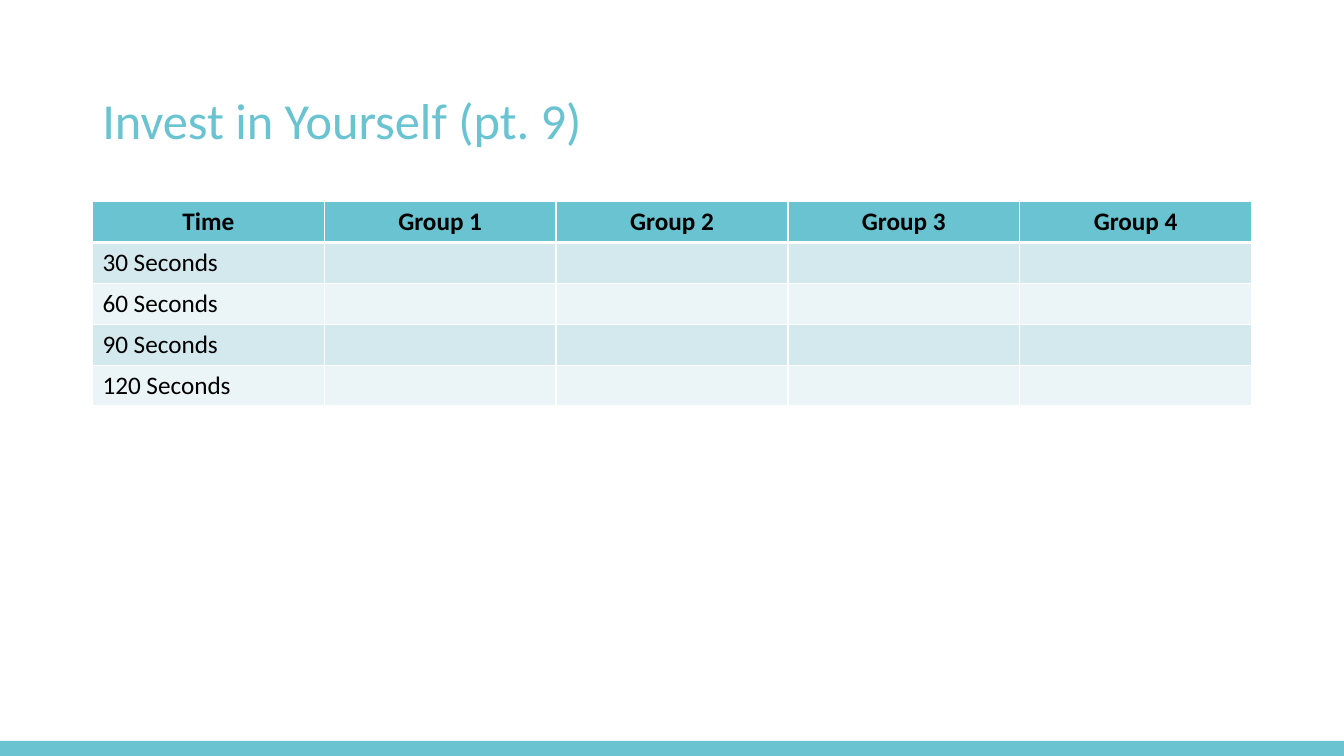
from dataclasses import dataclass

from lxml.etree import SubElement
from pptx import Presentation
from pptx.dml.color import RGBColor
from pptx.enum.shapes import MSO_SHAPE as Shape
from pptx.enum.text import MSO_ANCHOR as Anchor, PP_ALIGN as Align
from pptx.oxml.ns import qn
from pptx.util import Cm, Pt


@dataclass(frozen=True)
class Theme:
    font: str = "Calibri"
    accent: str = "69C3D1"
    bands: tuple = ("D4E9EE", "EBF5F7")
    text: str = "000000"
    border: str = "FFFFFF"
    title_size: int = 36
    table_size: int = 18
    thin_line: int = 1
    header_line: int = 3


theme = Theme()


def add_run(paragraph, text, size, color, bold=False):
    run = paragraph.add_run()
    run.text = text
    run.font.name = theme.font
    run.font.size = Pt(size)
    run.font.bold = bold
    run.font.color.rgb = RGBColor.from_string(color)


def add_border(cell, side, width):
    line = SubElement(cell._tc.get_or_add_tcPr(), qn(f"a:ln{side}"), w=str(Pt(width)))
    fill = SubElement(line, qn("a:solidFill"))
    SubElement(fill, qn("a:srgbClr"), val=theme.border)


presentation = Presentation()
presentation.slide_width = Cm(33.87)
presentation.slide_height = Cm(19.05)
slide = presentation.slides.add_slide(presentation.slide_layouts[6])

# Bottom bar
bar = slide.shapes.add_shape(Shape.RECTANGLE, Cm(0), Cm(18.67), Cm(33.87), Cm(0.38))
bar.shadow.inherit = False
bar.fill.solid()
bar.fill.fore_color.rgb = RGBColor.from_string(theme.accent)
bar.line.fill.background()

# Title
title = slide.shapes.add_textbox(Cm(2.33), Cm(2.26), Cm(29.21), Cm(1.68))
title.text_frame.word_wrap = True
title.text_frame.vertical_anchor = Anchor.MIDDLE
paragraph = title.text_frame.paragraphs[0]
paragraph.line_spacing = 0.9
add_run(paragraph, "Invest in Yourself (pt. 9)", theme.title_size, theme.accent)

# Table of times by group
headers = ["Time"] + [f"Group {number}" for number in range(1, 5)]
times = [f"{seconds} Seconds" for seconds in (30, 60, 90, 120)]
rows = [headers] + [[time] + [""] * 4 for time in times]
table = slide.shapes.add_table(
    len(rows), len(headers), Cm(2.33), Cm(5.08), Cm(29.21), Cm(5.15)
).table

for row_index, row in enumerate(rows):
    is_header = row_index == 0
    color = theme.accent if is_header else theme.bands[(row_index - 1) % 2]
    top_line = theme.header_line if row_index == 1 else theme.thin_line
    bottom_line = theme.header_line if is_header else theme.thin_line
    for column_index, text in enumerate(row):
        cell = table.cell(row_index, column_index)
        # Borders come before the fill in the cell properties
        for side, width in zip("LRTB", (theme.thin_line, theme.thin_line, top_line, bottom_line)):
            add_border(cell, side, width)
        cell.fill.solid()
        cell.fill.fore_color.rgb = RGBColor.from_string(color)
        paragraph = cell.text_frame.paragraphs[0]
        if is_header:
            paragraph.alignment = Align.CENTER
        if text:
            add_run(paragraph, text, theme.table_size, theme.text, bold=is_header)

presentation.save("out.pptx")
